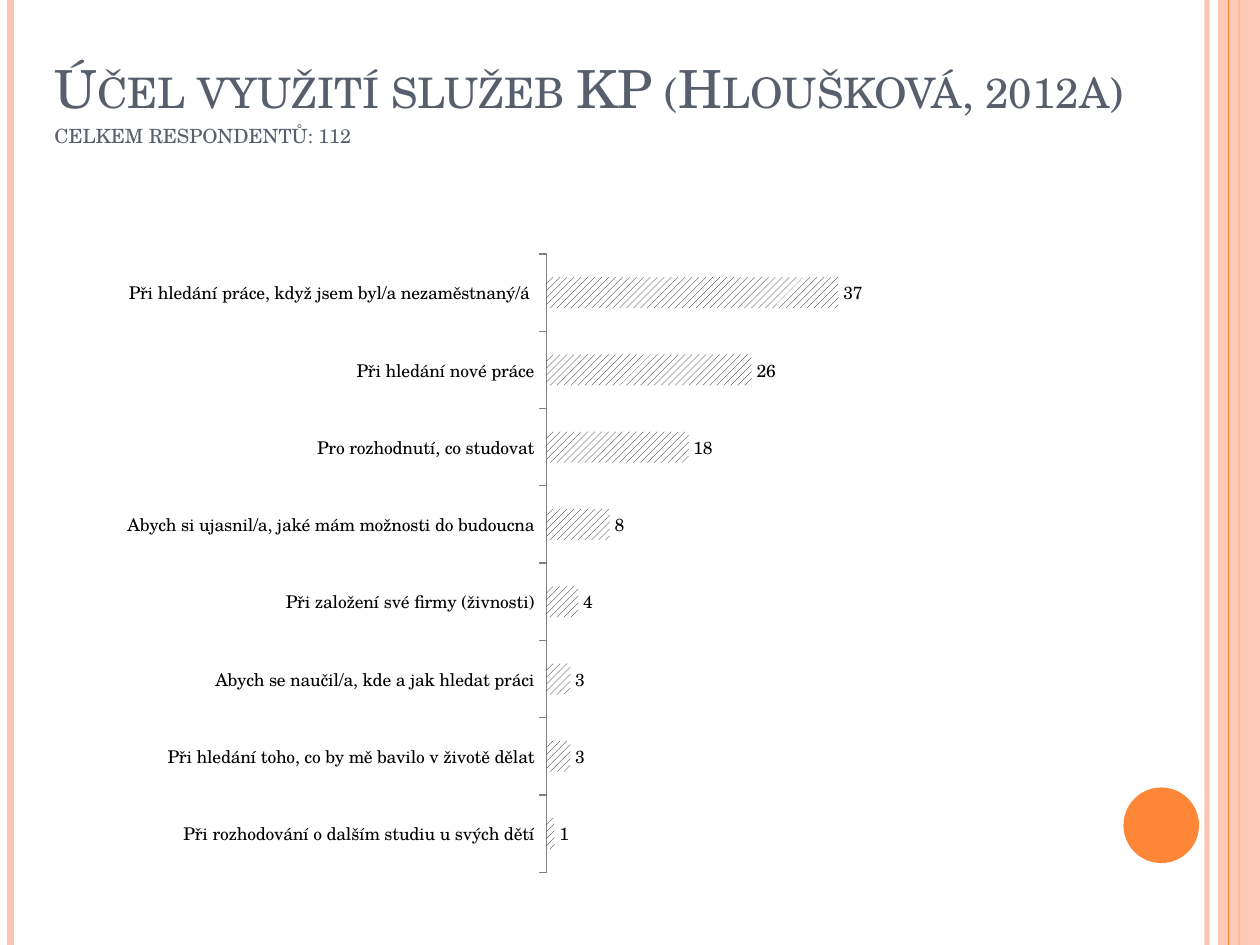
from dataclasses import dataclass

from lxml.etree import SubElement
from pptx import Presentation
from pptx.chart.data import CategoryChartData
from pptx.dml.color import RGBColor
from pptx.dml.fill import FillFormat
from pptx.enum.chart import XL_CHART_TYPE, XL_LABEL_POSITION, XL_TICK_MARK
from pptx.enum.dml import MSO_PATTERN
from pptx.enum.shapes import MSO_CONNECTOR, MSO_SHAPE
from pptx.enum.text import MSO_ANCHOR
from pptx.oxml.ns import qn
from pptx.slide import Slide
from pptx.util import Pt

FONT = "TeX Gyre Schola"
PEACH, ORANGE, SLATE = "FEC3AE", "FE8637", "575F6D"
BLACK, WHITE, GRAY = "000000", "FFFFFF", "808080"
PAGE_WIDTH, PAGE_HEIGHT = 720, 540


@dataclass
class Stripe:
    x: float
    weight: float
    color: str
    opacity: int = 100


@dataclass
class Block:
    preset: MSO_SHAPE
    left: float
    top: float
    width: float
    height: float
    color: str
    opacity: int = 100


@dataclass
class Span:
    text: str
    size: float


@dataclass
class Purpose:
    label: str
    answers: int


BACK_STRIPES = [
    Stripe(689.76, 3, PEACH, 93),
    Stripe(6, 4.5, PEACH),
    Stripe(708, 1.5, ORANGE),
]
BAND = Block(MSO_SHAPE.RECTANGLE, 696, 0, 24, PAGE_HEIGHT, PEACH, 87)
FRONT_STRIPE = Stripe(702, 0.75, ORANGE)
DISC = Block(MSO_SHAPE.OVAL, 642, 450, 43.2, 43.2, ORANGE)

TITLE = [
    Span("Účel využití služeb KP (Hloušková, 2012a)", 30),
    Span("celkem respondentů: 112", 14),
]

PURPOSES = [
    Purpose("Při hledání práce, když jsem byl/a nezaměstnaný/á ", 37),
    Purpose("Při hledání nové práce", 26),
    Purpose("Pro rozhodnutí, co studovat", 18),
    Purpose("Abych si ujasnil/a, jaké mám možnosti do budoucna", 8),
    Purpose("Při založení své firmy (živnosti)", 4),
    Purpose("Abych se naučil/a, kde a jak hledat práci", 3),
    Purpose("Při hledání toho, co by mě bavilo v životě dělat", 3),
    Purpose("Při rozhodování o dalším studiu u svých dětí", 1),
]

PLOT_LAYOUT = {
    "layoutTarget": "inner",
    "xMode": "edge",
    "yMode": "edge",
    "x": 0.47,
    "y": 0.05,
    "w": 0.46,
    "h": 0.92,
}


def rgb(color: str) -> RGBColor:
    return RGBColor.from_string(color)


def paint(fill: FillFormat, color: str, opacity: int = 100) -> None:
    fill.solid()
    fill.fore_color.rgb = rgb(color)
    if opacity < 100:
        tone = fill._xPr.find(f".//{qn('a:srgbClr')}")
        SubElement(tone, qn("a:alpha")).set("val", str(opacity * 1000))


def draw_stripe(page: Slide, stripe: Stripe) -> None:
    line = page.shapes.add_connector(
        MSO_CONNECTOR.STRAIGHT, Pt(stripe.x), 0, Pt(stripe.x), Pt(PAGE_HEIGHT)
    )
    line.line.width = Pt(stripe.weight)
    paint(line.line.fill, stripe.color, stripe.opacity)
    SubElement(line._element.spPr, qn("a:effectLst"))


def draw_block(page: Slide, block: Block) -> None:
    shape = page.shapes.add_shape(
        block.preset, Pt(block.left), Pt(block.top), Pt(block.width), Pt(block.height)
    )
    shape.shadow.inherit = False
    shape.line.fill.background()
    paint(shape.fill, block.color, block.opacity)


def draw_title(page: Slide, spans: list[Span]) -> None:
    box = page.shapes.add_textbox(Pt(24), Pt(18), Pt(672), Pt(70.56))
    frame = box.text_frame
    frame.word_wrap = True
    frame.vertical_anchor = MSO_ANCHOR.BOTTOM
    para = frame.paragraphs[0]
    for index, span in enumerate(spans):
        if index:
            para.add_line_break()
        run = para.add_run()
        run.text = span.text
        run.font.name = FONT
        run.font.size = Pt(span.size)
        run.font.color.rgb = rgb(SLATE)
        run.font._element.set("cap", "small")


def draw_chart(page: Slide, purposes: list[Purpose]) -> None:
    data = CategoryChartData(number_format="0")
    data.categories = [purpose.label for purpose in purposes]
    data.add_series("Series 1", [purpose.answers for purpose in purposes])
    chart = page.shapes.add_chart(
        XL_CHART_TYPE.BAR_CLUSTERED, Pt(36), Pt(126), Pt(588), Pt(384), data
    ).chart
    chart.has_legend = False
    chart.has_title = False
    chart.font.name = FONT
    chart.font.size = Pt(10)
    chart.font.color.rgb = rgb(BLACK)

    categories = chart.category_axis
    categories.reverse_order = True
    categories.major_tick_mark = XL_TICK_MARK.OUTSIDE
    categories.format.line.width = Pt(0.75)
    categories.format.line.color.rgb = rgb(GRAY)

    values = chart.value_axis
    values.minimum_scale, values.maximum_scale, values.major_unit = 0, 60, 20
    values.has_major_gridlines = False
    values.visible = False

    plot = chart.plots[0]
    plot.gap_width = 150
    plot.vary_by_categories = False
    plot.has_data_labels = True
    labels = plot.data_labels
    labels.show_value = True
    labels.number_format = "0"
    labels.number_format_is_linked = False
    labels.position = XL_LABEL_POSITION.OUTSIDE_END

    series = plot.series[0]
    series.invert_if_negative = False
    bars = series.format.fill
    bars.patterned()
    bars.pattern = MSO_PATTERN.WIDE_UPWARD_DIAGONAL
    bars.fore_color.rgb = rgb(BLACK)
    bars.back_color.rgb = rgb(WHITE)

    area = chart._chartSpace.chart.plotArea
    layout = area.find(qn("c:layout"))
    if layout is None:
        layout = SubElement(area, qn("c:layout"))
        area.insert(0, layout)
    manual = SubElement(layout, qn("c:manualLayout"))
    for name, value in PLOT_LAYOUT.items():
        SubElement(manual, qn(f"c:{name}")).set("val", str(value))


def main() -> None:
    deck = Presentation()
    deck.slide_width, deck.slide_height = Pt(PAGE_WIDTH), Pt(PAGE_HEIGHT)
    page = deck.slides.add_slide(deck.slide_layouts[6])
    for stripe in BACK_STRIPES:
        draw_stripe(page, stripe)
    draw_block(page, BAND)
    draw_stripe(page, FRONT_STRIPE)
    draw_block(page, DISC)
    draw_title(page, TITLE)
    draw_chart(page, PURPOSES)
    deck.save("out.pptx")


if __name__ == "__main__":
    main()
